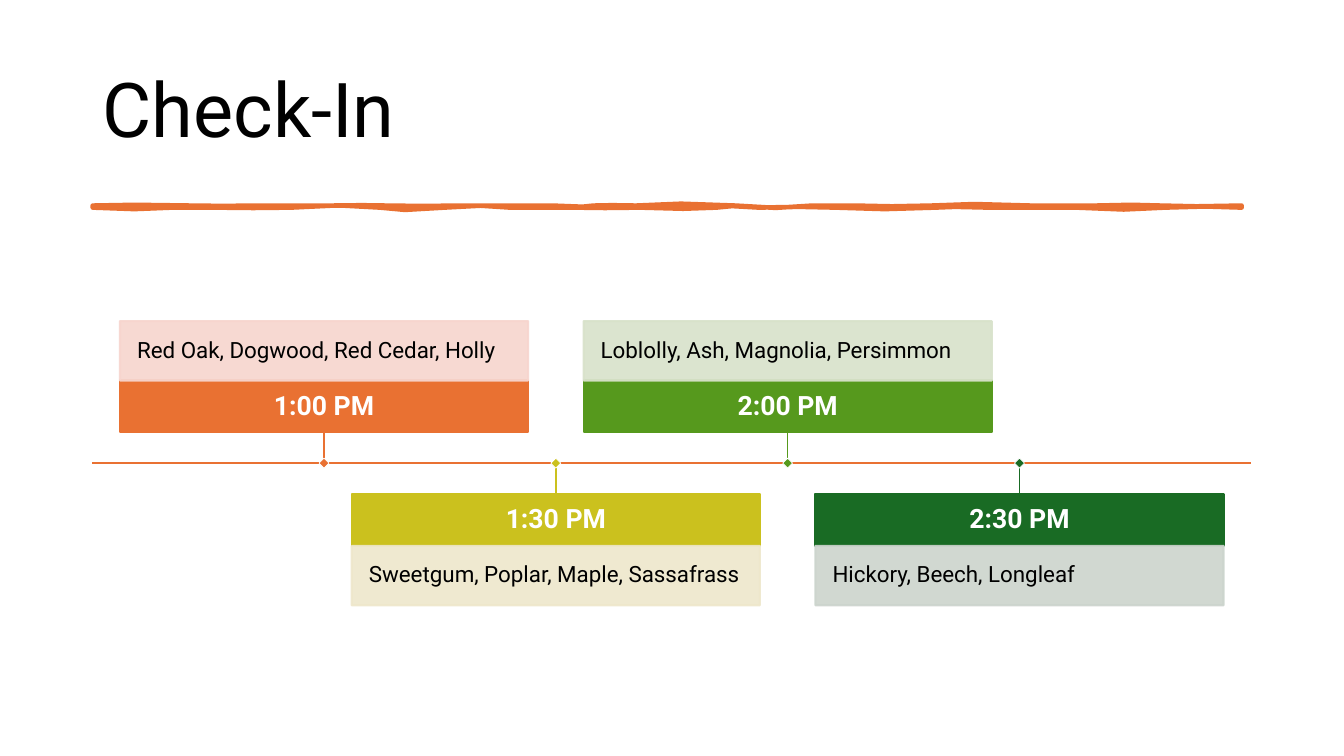
"""Build the Check-In timeline slide."""
from typing import NamedTuple

from lxml.etree import SubElement
from pptx import Presentation
from pptx.dml.color import RGBColor
from pptx.enum.shapes import MSO_CONNECTOR, MSO_SHAPE
from pptx.enum.text import MSO_ANCHOR, MSO_AUTO_SIZE, PP_ALIGN
from pptx.oxml.ns import qn
from pptx.util import Pt

PX = 4572
FONT = "Roboto"
COLORS = {
    "black": "000000", "white": "FFFFFF",
    "orange": "E97132", "orange_tint": "F7D5CE",
    "yellow": "CBC11E", "yellow_tint": "EEE7CB",
    "green": "56991D", "green_tint": "D8E2CA",
    "forest": "196B24", "forest_tint": "CCD4CD",
}
LEFT, STEP, WIDTH = 238, 460, 810
TIME_H, GROUPS_H, STEM, MARKER = 103, 118, 61, 14
AXIS_Y, AXIS_X1, AXIS_X2 = 919, 183, 2483
RULE_X1, RULE_X2, RULE_TOP, RULE_BOTTOM = 184, 2464, 408, 412
FINE = 100


class Slot(NamedTuple):
    time: str
    groups: str
    color: str


class Wave(NamedTuple):
    x1: int
    y1: int
    x2: int
    y2: int
    end: int


SLOTS = [
    Slot("1:00 PM", "Red Oak, Dogwood, Red Cedar, Holly", "orange"),
    Slot("1:30 PM", "Sweetgum, Poplar, Maple, Sassafrass", "yellow"),
    Slot("2:00 PM", "Loblolly, Ash, Magnolia, Persimmon", "green"),
    Slot("2:30 PM", "Hickory, Beech, Longleaf", "forest"),
]
TOP_WAVES = [
    Wave(238, 408, 288, 404, 380), Wave(474, 412, 440, 406, 488),
    Wave(534, 410, 606, 406, 662), Wave(720, 410, 718, 404, 768),
    Wave(820, 412, 846, 406, 920), Wave(996, 410, 1028, 406, 1096),
    Wave(1162, 410, 1162, 412, 1178), Wave(1196, 404, 1230, 410, 1262),
    Wave(1294, 406, 1402, 400, 1460), Wave(1518, 416, 1562, 412, 1612),
    Wave(1662, 404, 1654, 412, 1696), Wave(1736, 404, 1802, 416, 1848),
    Wave(1894, 400, 1964, 408, 2046), Wave(2126, 408, 2126, 408, 2174),
    Wave(2224, 408, 2272, 404, 2304), Wave(2336, 412, 2406, 408, 2464),
]
BOTTOM_WAVES = [
    Wave(2410, 412, 2378, 406, 2312), Wave(2244, 418, 2220, 416, 2136),
    Wave(2054, 408, 2046, 416, 1962), Wave(1878, 408, 1904, 412, 1856),
    Wave(1808, 412, 1702, 420, 1658), Wave(1612, 404, 1564, 416, 1506),
    Wave(1448, 408, 1450, 408, 1422), Wave(1396, 416, 1322, 414, 1270),
    Wave(1218, 410, 1180, 416, 1140), Wave(1102, 408, 1056, 416, 1012),
    Wave(966, 408, 946, 406, 882), Wave(818, 418, 780, 418, 754),
    Wave(726, 406, 620, 406, 578), Wave(536, 418, 470, 408, 426),
    Wave(384, 416, 378, 408, 342), Wave(308, 416, 228, 416, 184),
]


def rgb(name: str) -> RGBColor:
    return RGBColor.from_string(COLORS[name])


def paint(sp, fill: str, line: str, width: float, alpha: int = 100) -> None:
    sp.shadow.inherit = False
    sp.fill.solid()
    sp.fill.fore_color.rgb = rgb(fill)
    sp.line.color.rgb = rgb(line)
    sp.line.width = Pt(width)
    if alpha < 100:
        for color in sp._element.spPr.iter(qn("a:srgbClr")):
            SubElement(color, qn("a:alpha"), val=str(alpha * 1000))


def write(sp, text: str, size: int, color: str, align, bold: bool = False) -> None:
    tf = sp.text_frame
    tf.word_wrap = True
    tf.auto_size = MSO_AUTO_SIZE.NONE
    tf.vertical_anchor = MSO_ANCHOR.MIDDLE
    p = tf.paragraphs[0]
    p.alignment = align
    p.line_spacing = 0.9
    r = p.add_run()
    r.text = text
    r.font.name, r.font.size, r.font.bold = FONT, Pt(size), bold
    r.font.color.rgb = rgb(color)


def add_rect(s, x: int, y: int, w: int, h: int, inset: int = 0):
    sp = s.shapes.add_shape(MSO_SHAPE.RECTANGLE, x * PX, y * PX, w * PX, h * PX)
    tf = sp.text_frame
    tf.margin_left = tf.margin_right = tf.margin_top = tf.margin_bottom = inset * PX
    return sp


def add_line(s, x1: int, y1: int, x2: int, y2: int, color: str, width: float):
    cx = s.shapes.add_connector(MSO_CONNECTOR.STRAIGHT, x1 * PX, y1 * PX, x2 * PX, y2 * PX)
    cx.line.color.rgb = rgb(color)
    cx.line.width = Pt(width)
    SubElement(cx._element.spPr, qn("a:effectLst"))
    return cx


def trace(start: int, y: int, waves: list[Wave]) -> list[tuple[float, float]]:
    points = [(start * FINE, y * FINE)]
    for wave in waves:
        mid_x = (start + 3 * wave.x1 + 3 * wave.x2 + wave.end) / 8
        mid_y = (2 * y + 3 * wave.y1 + 3 * wave.y2) / 8
        points += [(mid_x * FINE, mid_y * FINE), (wave.end * FINE, y * FINE)]
        start = wave.end
    return points


def add_rule(s) -> None:
    points = trace(RULE_X1, RULE_TOP, TOP_WAVES) + trace(RULE_X2, RULE_BOTTOM, BOTTOM_WAVES)
    builder = s.shapes.build_freeform(*points[0], scale=PX / FINE)
    builder.add_line_segments(points[1:], close=True)
    paint(builder.convert_to_shape(), "orange", "orange", 3.25)


def add_slot(s, index: int, slot: Slot) -> None:
    x = LEFT + index * STEP
    above = index % 2 == 0
    time_y = AXIS_Y - STEM - TIME_H if above else AXIS_Y + STEM
    groups_y = time_y - GROUPS_H if above else time_y + TIME_H
    label = add_rect(s, x, time_y, WIDTH, TIME_H, 22)
    paint(label, slot.color, slot.color, 1.5)
    write(label, slot.time, 19, "white", PP_ALIGN.CENTER, True)
    groups = add_rect(s, x, groups_y, WIDTH, GROUPS_H, 34)
    tint = f"{slot.color}_tint"
    paint(groups, tint, tint, 1.5, 90)
    write(groups, slot.groups, 16, "black", PP_ALIGN.LEFT)
    mid = x + WIDTH // 2
    edge = time_y + TIME_H if above else time_y
    stem = add_line(s, mid, edge, mid, AXIS_Y, slot.color, 1)
    stem.begin_connect(label, 2 if above else 0)
    marker = add_rect(s, mid - MARKER // 2, AXIS_Y - MARKER // 2, MARKER, MARKER)
    marker.rotation = 45
    paint(marker, slot.color, "white", 0.5)


def main() -> None:
    prs = Presentation()
    prs.slide_width, prs.slide_height = 2667 * PX, 1500 * PX
    s = prs.slides.add_slide(prs.slide_layouts[5])
    title = s.shapes.title
    title.left, title.top, title.width, title.height = 184 * PX, 80 * PX, 2300 * PX, 290 * PX
    write(title, "Check-In", 54, "black", PP_ALIGN.LEFT)
    add_rule(s)
    add_line(s, AXIS_X1, AXIS_Y, AXIS_X2, AXIS_Y, "orange", 1.5)
    for index, slot in enumerate(SLOTS):
        add_slot(s, index, slot)
    prs.save("out.pptx")


if __name__ == "__main__":
    main()
